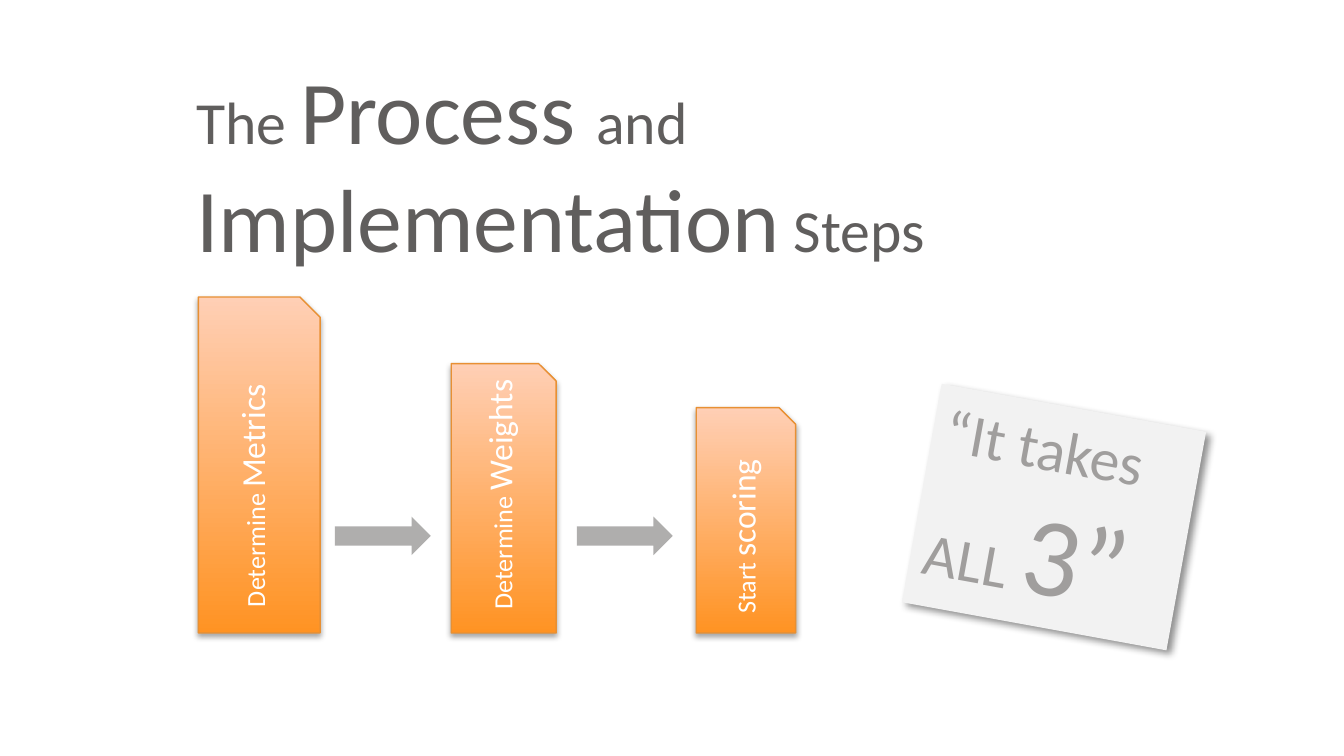
from dataclasses import dataclass

from lxml import etree
from pptx import Presentation
from pptx.dml.color import RGBColor
from pptx.enum import shapes, text
from pptx.oxml import ns
from pptx.util import Pt


@dataclass(frozen=True)
class Theme:
    font: str = "Calibri"
    dark: str = "605E5D"
    orange: str = "FF9323"
    peach: str = "FFCFB5"
    bar_line: str = "E89033"
    paper: str = "F2F2F2"
    note_text: str = "A09E9D"
    white: str = "FFFFFF"
    shadow: str = "000000"
    small: int = 14
    label: int = 18
    title: int = 32
    title_big: int = 48
    note_big: int = 60


def color(value):
    return RGBColor.from_string(value)


def add_child(parent, tag, **attributes):
    return etree.SubElement(parent, ns.qn(tag), {k: str(v) for k, v in attributes.items()})


class SlideBuilder:
    def __init__(self, page, theme):
        self.page = page
        self.theme = theme

    def fill_text(self, frame, paragraphs, ink):
        """Fill a frame with paragraphs, each a list of (words, size) spans."""
        frame.vertical_anchor = text.MSO_ANCHOR.TOP
        for index, spans in enumerate(paragraphs):
            para = frame.paragraphs[0] if index == 0 else frame.add_paragraph()
            para.alignment = text.PP_ALIGN.LEFT
            for words, size in spans:
                span = para.add_run()
                span.text = words
                span.font.name = self.theme.font
                span.font.size = Pt(size)
                span.font.color.rgb = color(ink)

    def text_box(self, left, top, width, height, paragraphs, ink, wrap=True, rotation=0):
        box = self.page.shapes.add_textbox(Pt(left), Pt(top), Pt(width), Pt(height))
        box.rotation = rotation
        box.text_frame.word_wrap = wrap
        self.fill_text(box.text_frame, paragraphs, ink)

    def shape(self, kind, left, top, width, height):
        shape = self.page.shapes.add_shape(kind, Pt(left), Pt(top), Pt(width), Pt(height))
        shape.shadow.inherit = False
        shape.line.fill.background()
        return shape

    def cast_shadow(self, shape, alpha, blur, distance, angle):
        effects = shape._element.spPr.find(ns.qn("a:effectLst"))
        shadow = add_child(effects, "a:outerShdw", blurRad=Pt(blur), dist=Pt(distance),
                           dir=angle * 60000, rotWithShape=0)
        tint = add_child(shadow, "a:srgbClr", val=self.theme.shadow)
        add_child(tint, "a:alpha", val=alpha * 1000)

    def bar(self, left, width, height, bottom):
        bar = self.shape(shapes.MSO_SHAPE.SNIP_1_RECTANGLE, left, bottom - height, width, height)
        bar.fill.gradient()
        bar.fill.gradient_angle = 90
        for stop, tint in zip(bar.fill.gradient_stops, (self.theme.orange, self.theme.peach)):
            stop.color.rgb = color(tint)
        bar.line.color.rgb = color(self.theme.bar_line)
        bar.line.width = Pt(0.75)
        self.cast_shadow(bar, 35, 3.1, 1.8, 90)

    def bar_label(self, center_x, center_y, lead, key):
        """Add a label that reads upwards, centred on the given point."""
        length, depth = 212.4, 29
        spans = [(lead, self.theme.small), (key, self.theme.label)]
        self.text_box(center_x - length / 2, center_y - depth / 2, length, depth,
                      [spans], self.theme.white, rotation=270)

    def arrow(self, left, top):
        arrow = self.shape(shapes.MSO_SHAPE.RIGHT_ARROW, left, top, 51.4, 20.6)
        arrow.fill.solid()
        arrow.fill.fore_color.rgb = color(self.theme.dark)
        tint = arrow._element.spPr.find(ns.qn("a:solidFill"))[0]
        add_child(tint, "a:alpha", val=50000)

    def note(self, left, top, width, height, spans):
        note = self.shape(shapes.MSO_SHAPE.RECTANGLE, left, top, width, height)
        note.rotation = 10.3
        note.fill.solid()
        note.fill.fore_color.rgb = color(self.theme.paper)
        self.cast_shadow(note, 43, 4, 3, 45)
        note.text_frame.word_wrap = True
        self.fill_text(note.text_frame, [spans], self.theme.note_text)


def main():
    deck = Presentation()
    deck.slide_width, deck.slide_height = Pt(720), Pt(405)
    theme = Theme()
    slide = SlideBuilder(deck.slides.add_slide(deck.slide_layouts[6]), theme)

    slide.text_box(98, 26, 409.7, 123.8, [
        [("The ", theme.title), ("Process ", theme.title_big), ("and", theme.title)],
        [("Implementation", theme.title_big), (" Steps", theme.title)],
    ], theme.dark, wrap=False)

    # left, width, height, label centre x and y, label words
    steps = [
        (106.3, 65.2, 180, 135, 226.1, "Determine ", "Metrics"),
        (241.7, 56.2, 144.3, 267.5, 227.5, "Determine ", "Weights"),
        (373, 53.2, 120.7, 397.8, 229.7, "Start ", "scoring"),
    ]
    for left, width, height, *_ in steps:
        slide.bar(left, width, height, bottom=339.1)
    for *_, center_x, center_y, lead, key in steps:
        slide.bar_label(center_x, center_y, lead, key)
    for left in (179.4, 309):
        slide.arrow(left, 276.8)

    slide.note(492.7, 217.5, 144, 119,
               [("“It takes ALL ", theme.title), ("3”", theme.note_big)])
    deck.save("out.pptx")


if __name__ == "__main__":
    main()
